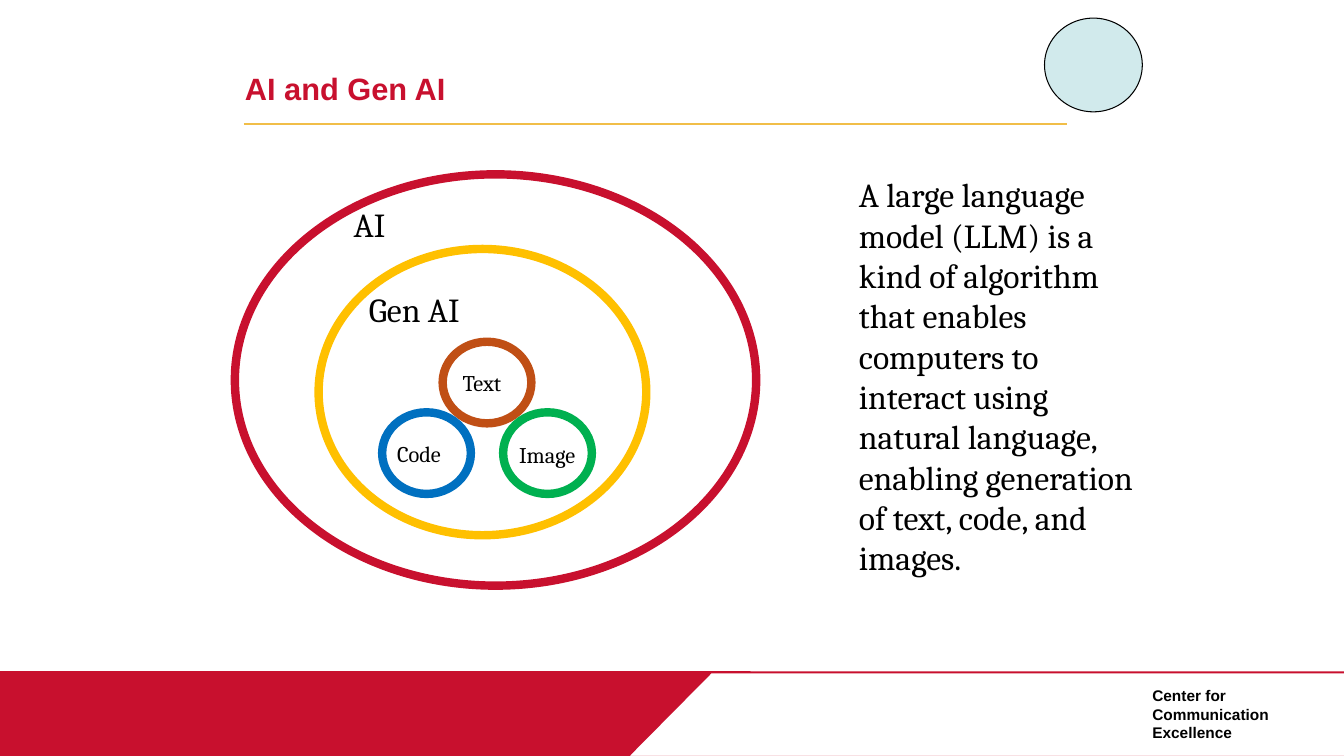
from lxml import etree
from pptx import Presentation
from pptx.dml.color import RGBColor
from pptx.enum import shapes, text
from pptx.oxml import ns
from pptx.util import Inches, Pt

RED = RGBColor(0xC8, 0x10, 0x2E)
GOLD = RGBColor(0xF1, 0xBE, 0x48)
AMBER = RGBColor(0xFF, 0xC0, 0x00)
RUST = RGBColor(0xC0, 0x4F, 0x15)
GREEN = RGBColor(0x00, 0xB0, 0x50)
BLUE = RGBColor(0x00, 0x70, 0xC0)
PALE = RGBColor(0xBB, 0xE0, 0xE3)
BLACK = RGBColor(0, 0, 0)
WHITE = RGBColor(0xFF, 0xFF, 0xFF)

KIND = shapes.MSO_SHAPE
HEAD = {"name": "Arial", "size": Pt(22), "bold": True}
FOOT = {"name": "Arial", "size": Pt(11), "bold": True}
LARGE = {"name": "Cambria", "size": Pt(24), "bold": False}
SMALL = {"name": "Cambria", "size": Pt(16), "bold": False}


def place(shape, box):
    for key, value in zip(("left", "top", "width", "height"), box):
        setattr(shape, key, Inches(value))


def write(shape, words, style, color=BLACK, right=0.1):
    frame = shape.text_frame
    form = {"word_wrap": True, "auto_size": text.MSO_AUTO_SIZE.NONE,
            "vertical_anchor": text.MSO_ANCHOR.TOP,
            "margin_left": Inches(0.1), "margin_right": Inches(right),
            "margin_top": Inches(0.05), "margin_bottom": Inches(0.05)}
    for key, value in form.items():
        setattr(frame, key, value)
    frame.text = words
    para = frame.paragraphs[0]
    para.alignment = text.PP_ALIGN.LEFT
    para.line_spacing = 1.0
    font = para.runs[0].font
    for key, value in style.items():
        setattr(font, key, value)
    font.color.rgb = color


def label(slide, box, words, style, right=0.1):
    shape = slide.shapes.add_textbox(*map(Inches, box))
    write(shape, words, style, right=right)


def draw(slide, kind, box, line, weight, fill=None):
    shape = slide.shapes.add_shape(kind, *map(Inches, box))
    shape.shadow.inherit = False
    if fill is None:
        shape.fill.background()
    else:
        shape.fill.solid()
        shape.fill.fore_color.rgb = fill
    shape.line.color.rgb = line
    shape.line.width = Pt(weight)
    return shape


def fade(shape, share):
    tint = shape.fill._xPr.find(".//" + ns.qn("a:srgbClr"))
    etree.SubElement(tint, ns.qn("a:alpha"), val=str(share * 1000))


def rule(slide, start, end, color):
    line = slide.shapes.add_connector(
        shapes.MSO_CONNECTOR.STRAIGHT, *map(Inches, start + end))
    line.line.color.rgb = color
    line.line.width = Pt(1)
    etree.SubElement(line._element.spPr, ns.qn("a:effectLst"))


def footer(slide):
    draw(slide, KIND.RECTANGLE, (0, 6.67, 7.44, 0.83), RED, 1.5, RED)
    slant = draw(slide, KIND.PARALLELOGRAM, (6.22, 6.67, 8.44, 0.84),
                 RED, 1.5, WHITE)
    slant.adjustments[0] = 0.99
    label(slide, (11.33, 6.76, 1.89, 0.66),
          "Center for Communication Excellence", FOOT)


def header(slide):
    title = slide.shapes.title
    place(title, (2.33, 0.64, 5.58, 0.47))
    write(title, "AI and Gen AI", HEAD, RED)
    rule(slide, (2.42, 1.23), (10.58, 1.23), GOLD)
    disc = draw(slide, KIND.OVAL, (10.36, 0.18, 0.97, 0.93), BLACK, 0.75, PALE)
    fade(disc, 67)


def nest(slide):
    # Outer fields and their names
    draw(slide, KIND.OVAL, (2.33, 1.73, 5.17, 4.08), RED, 6)
    draw(slide, KIND.OVAL, (3.16, 2.47, 3.25, 2.84), AMBER, 6)
    label(slide, (3.41, 1.97, 0.75, 0.5), "AI", LARGE, 0)
    label(slide, (3.56, 2.82, 1.21, 0.5), "Gen AI", LARGE, 0)

    # Kinds of output: ring corner, then label corner
    for words, color, ring, spot in (
            ("Text", RUST, (4.39, 3.39), (4.49, 3.61)),
            ("Image", GREEN, (4.99, 4.09), (5.05, 4.33)),
            ("Code", BLUE, (3.79, 4.09), (3.84, 4.32))):
        draw(slide, KIND.OVAL, ring + (0.88, 0.81), color, 6)
        label(slide, spot + (0.77, 0.37), words, SMALL, 0)


def main():
    deck = Presentation()
    deck.slide_width, deck.slide_height = Inches(13.33), Inches(7.5)
    slide = deck.slides.add_slide(deck.slide_layouts[5])
    footer(slide)
    header(slide)
    nest(slide)

    # Definition
    label(slide, (8.42, 1.68, 3.08, 4.1),
          "A large language model (LLM) is a kind of algorithm that enables "
          "computers to interact using natural language, enabling generation "
          "of text, code, and images.", LARGE)
    deck.save("out.pptx")


if __name__ == "__main__":
    main()
